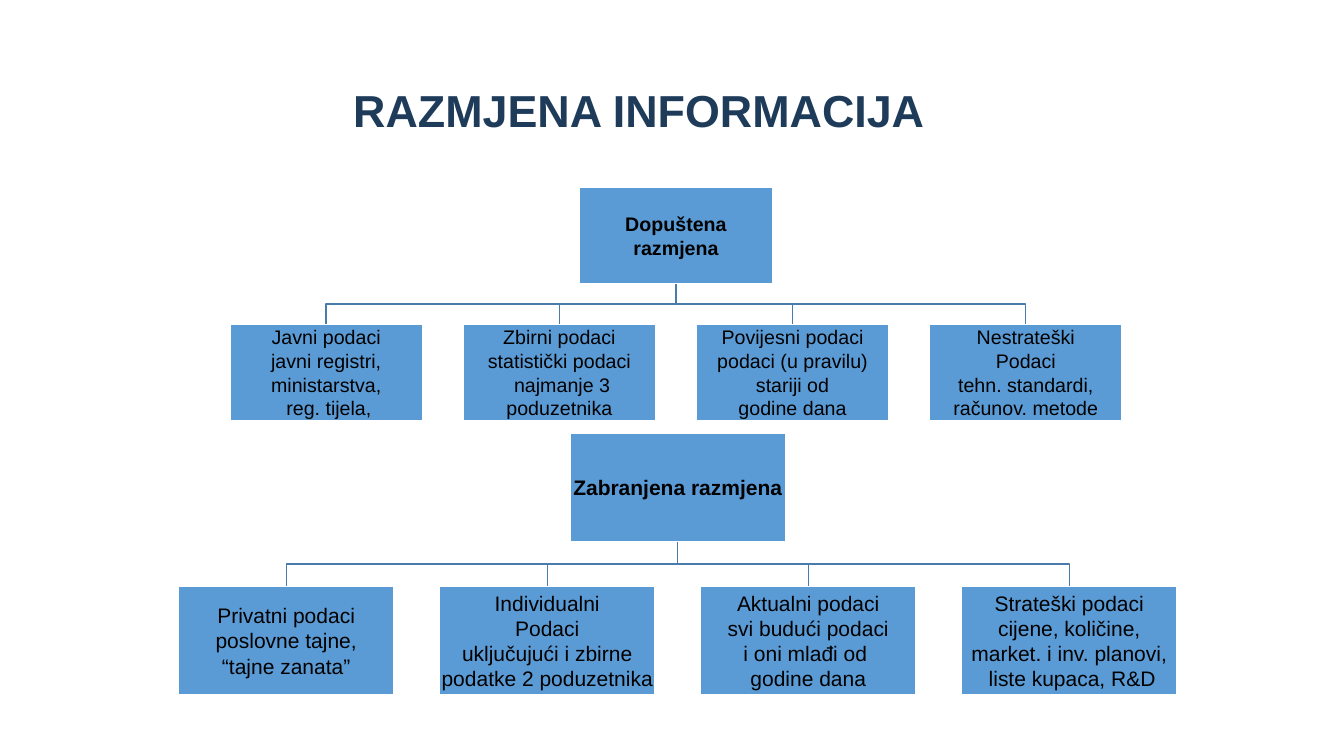
from dataclasses import dataclass

from pptx import Presentation
from pptx.dml.color import RGBColor
from pptx.enum.shapes import MSO_SHAPE
from pptx.enum.text import MSO_ANCHOR as Anchor, PP_ALIGN as Align
from pptx.util import Inches, Pt


@dataclass(frozen=True)
class Theme:
    font: str = "Arial"
    heading: RGBColor = RGBColor(0x1E, 0x3C, 0x5A)
    ink: RGBColor = RGBColor(0, 0, 0)
    box: RGBColor = RGBColor(0x5B, 0x9B, 0xD5)
    border: RGBColor = RGBColor(255, 255, 255)
    branch: RGBColor = RGBColor(0x49, 0x7C, 0xAB)
    title_size: int = 32
    permitted_size: int = 14
    prohibited_size: int = 15
    line_width: int = 1
    inset: float = 0.01


class InfoSlide:
    GAP = 0.21  # space between boxes, as a share of box width
    ASPECT = 0.5  # box height, as a share of box width

    def __init__(self, deck, theme):
        self.theme = theme
        self.width, self.height = deck.slide_width, deck.slide_height
        self.slide = deck.slides.add_slide(deck.slide_layouts[5])

    def x(self, percent):
        return round(self.width * percent / 100)

    def y(self, percent):
        return round(self.height * percent / 100)

    def add_lines(self, frame, lines, size, color, bold=False):
        frame.word_wrap = True
        frame.vertical_anchor = Anchor.MIDDLE
        for index, line in enumerate(lines):
            paragraph = frame.paragraphs[0] if index == 0 else frame.add_paragraph()
            paragraph.alignment = Align.CENTER
            run = paragraph.add_run()
            run.text = line
            run.font.name = self.theme.font
            run.font.size = Pt(size)
            run.font.bold = bold
            run.font.color.rgb = color

    def title(self, text, left, top, width, height):
        heading = self.slide.shapes.title
        heading.left, heading.top = self.x(left), self.y(top)
        heading.width, heading.height = self.x(width), self.y(height)
        self.add_lines(heading.text_frame, [text], self.theme.title_size,
                       self.theme.heading, bold=True)
        heading.text_frame.paragraphs[0].line_spacing = 0.9

    def box(self, center, top, width, lines, size, bold=False):
        node = self.slide.shapes.add_shape(
            MSO_SHAPE.RECTANGLE, round(center - width / 2), round(top),
            round(width), round(width * self.ASPECT))
        node.shadow.inherit = False
        node.fill.solid()
        node.fill.fore_color.rgb = self.theme.box
        node.line.color.rgb = self.theme.border
        node.line.width = Pt(self.theme.line_width)
        frame = node.text_frame
        frame.margin_left = frame.margin_right = Inches(self.theme.inset)
        frame.margin_top = frame.margin_bottom = Inches(self.theme.inset)
        self.add_lines(frame, lines, size, self.theme.ink, bold)

    def branch(self, parent_x, parent_y, child_x, child_y):
        """Draw an elbow that turns halfway down from parent to child."""
        middle = (parent_y + child_y) / 2
        builder = self.slide.shapes.build_freeform(parent_x, parent_y)
        builder.add_line_segments(
            [(parent_x, middle), (child_x, middle), (child_x, child_y)], close=False)
        elbow = builder.convert_to_shape()
        elbow.shadow.inherit = False
        elbow.fill.background()
        elbow.line.color.rgb = self.theme.branch
        elbow.line.width = Pt(self.theme.line_width)

    def tree(self, root, children, center, top, box_width, size):
        """Draw a root box over an evenly spaced row of child boxes."""
        middle, root_top, width = self.x(center), self.y(top), self.x(box_width)
        root_bottom = root_top + width * self.ASPECT
        child_top = root_bottom + width * self.GAP
        pitch = width * (1 + self.GAP)
        first = middle - pitch * (len(children) - 1) / 2
        centers = [first + pitch * column for column in range(len(children))]
        for child_center in centers:
            self.branch(middle, root_bottom, child_center, child_top)
        self.box(middle, root_top, width, [root], size, bold=True)
        for child_center, lines in zip(centers, children):
            self.box(child_center, child_top, width, lines, size)


PERMITTED = [
    ["Javni podaci", "javni registri,", "ministarstva,", " reg. tijela,"],
    ["Zbirni podaci", "statistički podaci", " najmanje 3", "poduzetnika"],
    ["Povijesni podaci", "podaci (u pravilu)", " stariji od ", "godine dana"],
    ["Nestrateški", "Podaci", "tehn. standardi,", "računov. metode"],
]
PROHIBITED = [
    ["Privatni podaci", "poslovne tajne,", "“tajne zanata”"],
    ["Individualni", "Podaci", "uključujući i zbirne", "podatke 2 poduzetnika"],
    ["Aktualni podaci", "svi budući podaci", "i oni mlađi od ", "godine dana"],
    ["Strateški podaci", "cijene, količine,", "market. i inv. planovi,",
     " liste kupaca, R&D"],
]


def main():
    deck = Presentation()
    deck.slide_width, deck.slide_height = Inches(13.33), Inches(7.5)
    theme = Theme()
    page = InfoSlide(deck, theme)
    page.title("RAZMJENA INFORMACIJA", left=6.9, top=5.33, width=81.3, height=19.33)
    page.tree("Dopuštena razmjena", PERMITTED, center=50.3, top=24.8,
              box_width=14.34, size=theme.permitted_size)
    page.tree("Zabranjena razmjena", PROHIBITED, center=50.43, top=57.35,
              box_width=16.05, size=theme.prohibited_size)
    deck.save("out.pptx")


if __name__ == "__main__":
    main()
